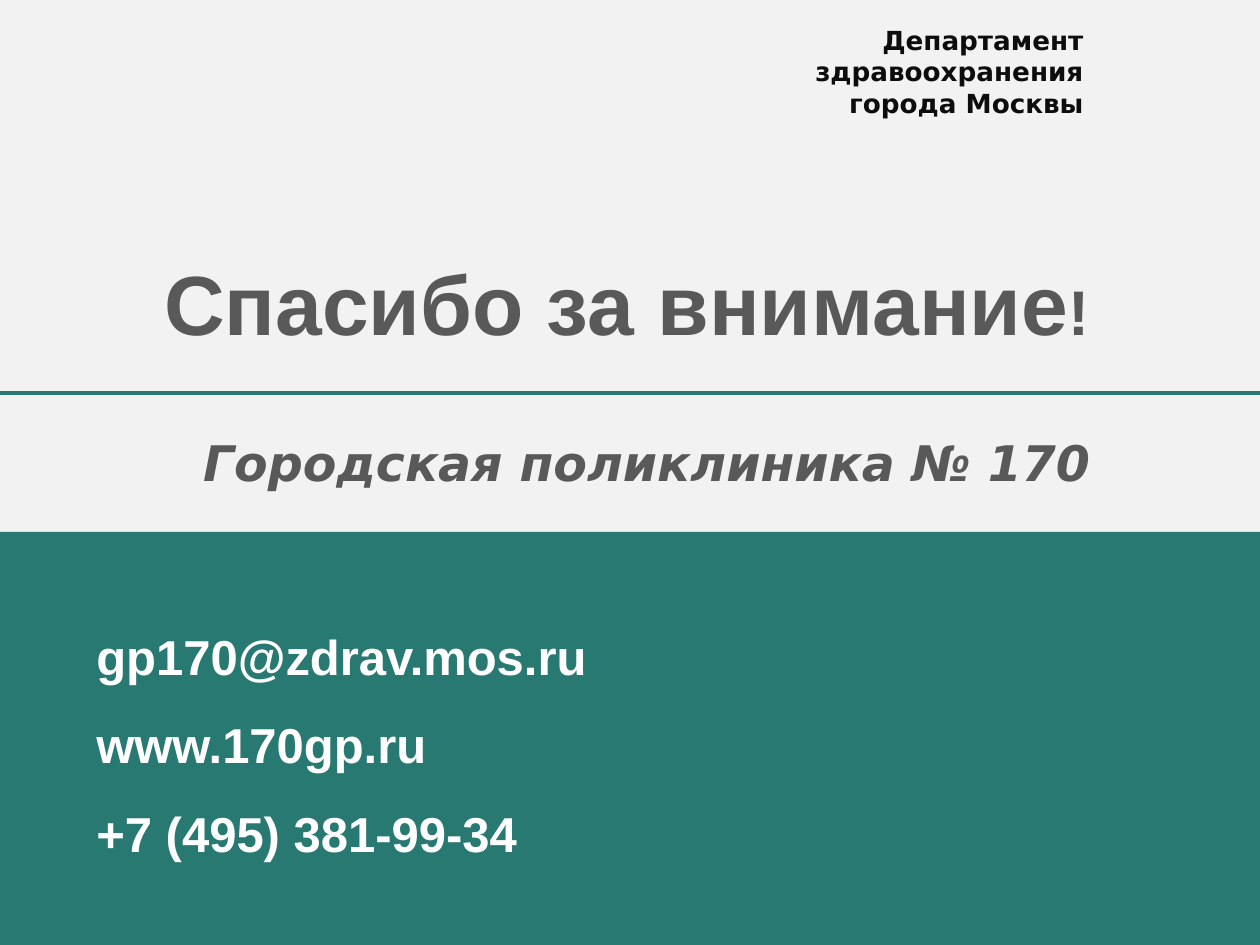
from lxml.etree import SubElement
from pptx import Presentation
from pptx.dml.color import RGBColor
from pptx.enum.shapes import MSO_CONNECTOR, MSO_SHAPE
from pptx.enum.text import MSO_AUTO_SIZE, PP_ALIGN
from pptx.oxml.ns import qn
from pptx.util import Emu, Pt

PX_PER_INCH = 126
TEAL, GREY, WHITE, BLACK, PALE = "297973", "595959", "FFFFFF", "0D0D0D", "F2F2F2"


def px(length):
    return Emu(round(length * 914400 / PX_PER_INCH))


def color(hex_value):
    return RGBColor.from_string(hex_value)


def apply(target, values):
    for name, value in values.items():
        setattr(target, name, value)


class SlideBuilder:
    def __init__(self, slide, accent):
        self.slide = slide
        self.accent = accent

    def background(self, hex_value):
        fill = self.slide.background.fill
        fill.solid()
        fill.fore_color.rgb = color(hex_value)

    def band(self, left, top, width, height):
        shape = self.slide.shapes.add_shape(
            MSO_SHAPE.RECTANGLE, *map(px, (left, top, width, height)))
        shape.shadow.inherit = False
        shape.fill.solid()
        shape.fill.fore_color.rgb = color(self.accent)
        shape.line.fill.background()

    def rule(self, left, right, y, weight):
        line = self.slide.shapes.add_connector(
            MSO_CONNECTOR.STRAIGHT, *map(px, (left, y, right, y)))
        line.line.color.rgb = color(self.accent)
        line.line.width = Pt(weight)
        SubElement(line._element.spPr, qn("a:effectLst"))

    def text(self, box, paragraphs, font, hex_value, layout, frame_format=None):
        """Each paragraph is a list of (text, size) runs."""
        frame = self.slide.shapes.add_textbox(*map(px, box)).text_frame
        apply(frame, {"word_wrap": True,
                      "auto_size": MSO_AUTO_SIZE.SHAPE_TO_FIT_TEXT,
                      **(frame_format or {})})
        for index, runs in enumerate(paragraphs):
            paragraph = frame.add_paragraph() if index else frame.paragraphs[0]
            apply(paragraph, layout)
            for content, size in runs:
                run = paragraph.add_run()
                run.text = content
                apply(run.font, {"size": Pt(size), "bold": True, **font})
                run.font.color.rgb = color(hex_value)


def main():
    presentation = Presentation()
    apply(presentation, {"slide_width": px(1260), "slide_height": px(945)})
    slide = presentation.slides.add_slide(presentation.slide_layouts[6])
    builder = SlideBuilder(slide, TEAL)
    builder.background(PALE)

    arial = {"name": "Arial"}
    dejavu = {"name": "DejaVu Sans"}
    centred = {"alignment": PP_ALIGN.CENTER}
    no_margins = {f"margin_{side}": 0 for side in ("left", "top", "right", "bottom")}

    # Contact band
    builder.band(-5, 532, 1273, 413)
    contacts = ["gp170@zdrav.mos.ru", "www.170gp.ru", "+7 (495) 381-99-34"]
    builder.text((84, 591, 522, 268), [[(contact, 28)] for contact in contacts],
                 arial, WHITE, {"line_spacing": 1.5}, {"word_wrap": False})

    # Closing words and clinic name, parted by a rule
    builder.text((43, 252, 1168, 102), [[("Спасибо за внимание", 48), ("!", 36)]],
                 arial, GREY, centred, no_margins)
    builder.text((57, 433, 1179, 59), [[("Городская поликлиника № 170", 28)]],
                 {**dejavu, "italic": True}, GREY, centred, no_margins)
    builder.rule(-8, 1260, 393, 2.25)

    # Department
    builder.text((699, 18, 397, 108),
                 [[("Департамент здравоохранения города Москвы", 15)]],
                 dejavu, BLACK, {"alignment": PP_ALIGN.RIGHT})

    presentation.save("out.pptx")


if __name__ == "__main__":
    main()
